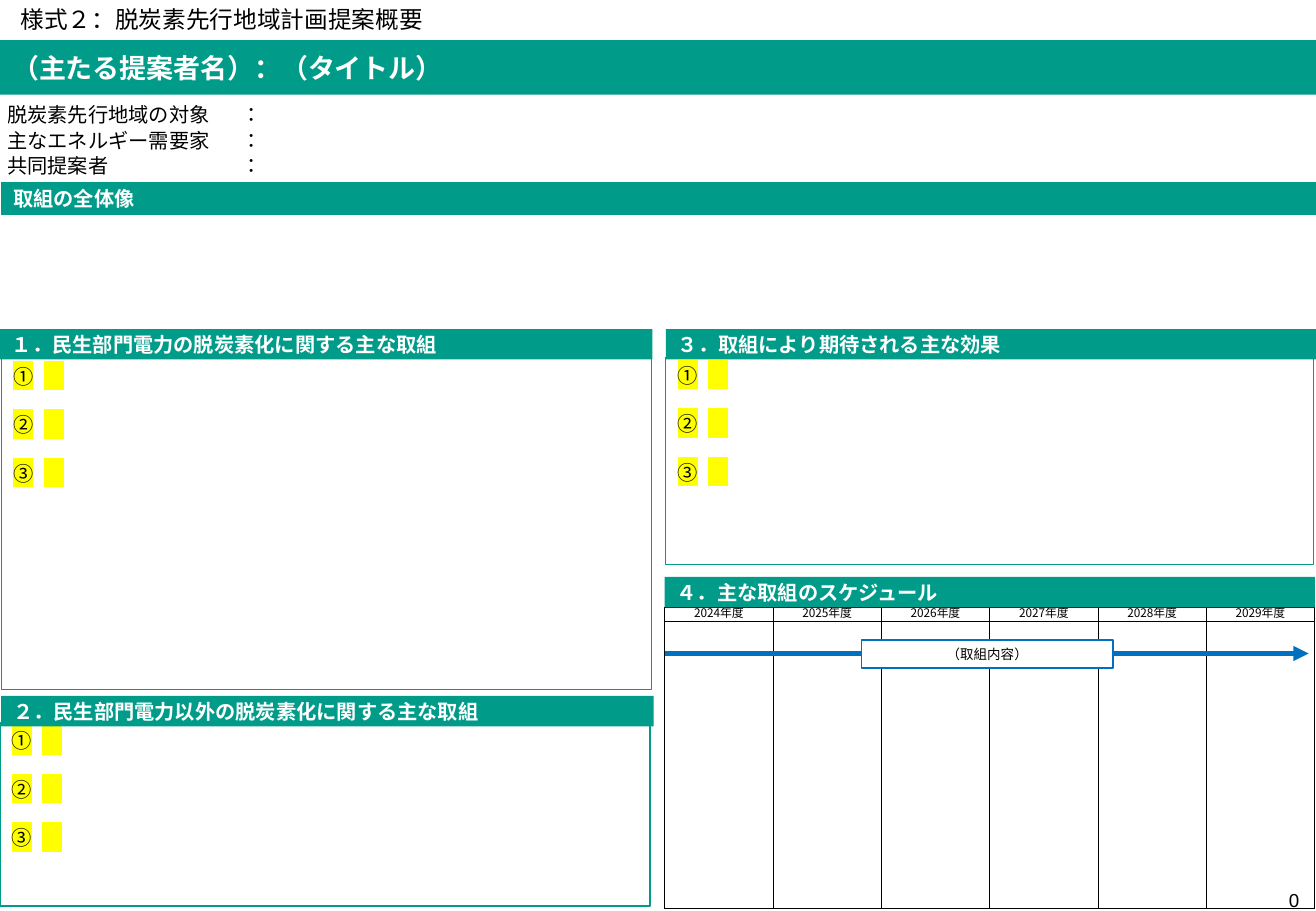
from dataclasses import dataclass

from lxml.etree import SubElement
from pptx import Presentation
from pptx.dml.color import RGBColor
from pptx.enum.shapes import MSO_CONNECTOR as Line, MSO_SHAPE as Shape
from pptx.enum.text import MSO_ANCHOR as Anchor, PP_ALIGN as Align
from pptx.oxml.ns import qn
from pptx.util import Inches, Pt


@dataclass(frozen=True)
class Theme:
    font = "Noto Sans CJK JP"
    teal = RGBColor.from_string("009C89")
    blue = RGBColor.from_string("0070C0")
    white = RGBColor.from_string("FFFFFF")
    black = RGBColor.from_string("000000")
    mark = "FFFF00"
    title = Pt(16)
    form = Pt(14)
    body = Pt(12)
    page = Pt(11.1)
    label = Pt(8)
    year = Pt(7)


def write(frame, text, size, color=Theme.black, bold=False, align=Align.LEFT):
    para = frame.paragraphs[0]
    para.text = text
    para.alignment = align
    font = para.font
    font.size, font.bold, font.name = size, bold, Theme.font
    font.color.rgb = color
    props = para._p.pPr.find(qn("a:defRPr"))
    SubElement(props, qn("a:ea"), typeface=Theme.font)
    return para


def pad(frame, side=0, top=0):
    """Set the inner margins of a text frame or table cell."""
    frame.margin_left = frame.margin_right = Inches(side)
    frame.margin_top = frame.margin_bottom = Inches(top)


prs = Presentation()
prs.slide_width, prs.slide_height = Inches(10.83), Inches(7.5)
slide = prs.slides.add_slide(prs.slide_layouts[5])
shapes = slide.shapes

# Framed boxes with numbered, highlighted entries
boxes = [
    (5.48, 2.94, 5.33, 1.71),
    (0.01, 2.95, 5.35, 2.73),
    (0, 5.95, 5.35, 1.51),
]
for spot in boxes:
    box = shapes.add_shape(Shape.RECTANGLE, *map(Inches, spot))
    box.shadow.inherit = False
    box.fill.background()
    box.line.color.rgb = Theme.teal
    box.line.width = Pt(0.75)
    frame = box.text_frame
    frame.vertical_anchor = Anchor.TOP
    pad(frame, 0.1, 0.05)
    for num in range(3):
        para = frame.add_paragraph() if num else frame.paragraphs[0]
        para.alignment = Align.LEFT
        if num:
            para.space_before = Pt(14.3)
        props = para._p.get_or_add_pPr()
        props.set("marL", str(Inches(0.25)))
        props.set("indent", str(-Inches(0.25)))
        SubElement(props, qn("a:buFont"), typeface=Theme.font)
        SubElement(props, qn("a:buAutoNum"), type="circleNumDbPlain")
        run = para.add_run()
        run.text = "　"
        run.font.size, run.font.bold = Theme.body, False
        run.font.color.rgb = Theme.black
        style = run._r.get_or_add_rPr()
        mark = SubElement(style, qn("a:highlight"))
        SubElement(mark, qn("a:srgbClr"), val=Theme.mark)
        for tag in ("a:latin", "a:ea"):
            SubElement(style, qn(tag), typeface=Theme.font)

# Schedule
years = range(2024, 2030)
plan = shapes.add_table(
    2, len(years), Inches(5.47), Inches(5), Inches(5.35), Inches(2.48)).table
plan.first_row = plan.horz_banding = False
plan.rows[0].height, plan.rows[1].height = Inches(0.12), Inches(2.36)
for col, year in enumerate(years):
    head = plan.cell(0, col)
    write(head.text_frame, f"{year}年度", Theme.year,
          align=Align.CENTER).line_spacing = Pt(8)
    head.vertical_anchor = Anchor.MIDDLE
for cell in plan.iter_cells():
    pad(cell)
    props = cell._tc.get_or_add_tcPr()
    for side in ("a:lnL", "a:lnR", "a:lnT", "a:lnB"):
        edge = SubElement(props, qn(side), w=str(Pt(0.5)))
        fill = SubElement(edge, qn("a:solidFill"))
        SubElement(fill, qn("a:srgbClr"), val=str(Theme.black))
    cell.fill.background()

# Title and section bars
title = shapes.title
shapes._spTree.append(title._element)
title.left, title.top = Inches(0), Inches(0.33)
title.width, title.height = Inches(10.83), Inches(0.45)
title.fill.solid()
title.fill.fore_color.rgb = Theme.teal
title.text_frame.vertical_anchor = Anchor.MIDDLE
write(title.text_frame, "（主たる提案者名）：（タイトル）", Theme.title,
      Theme.white, True)

bars = [
    ("１．民生部門電力の脱炭素化に関する主な取組", 0, 2.71, 5.37, 0.25),
    ("２．民生部門電力以外の脱炭素化に関する主な取組", 0.01, 5.73, 5.37, 0.25),
    ("４．主な取組のスケジュール", 5.47, 4.75, 5.35, 0.25),
    ("３．取組により期待される主な効果", 5.48, 2.71, 5.35, 0.25),
    ("取組の全体像", 0.01, 1.5, 10.82, 0.27),
]
for text, *spot in bars:
    bar = shapes.add_shape(Shape.RECTANGLE, *map(Inches, spot))
    bar.shadow.inherit = False
    bar.fill.solid()
    bar.fill.fore_color.rgb = Theme.teal
    bar.line.fill.background()
    bar.text_frame.vertical_anchor = Anchor.MIDDLE
    write(bar.text_frame, text, Theme.body, Theme.white, True)

# Arrow with its label
group = shapes.add_group_shape().shapes
arrow = group.add_connector(
    Line.STRAIGHT, Inches(5.47), Inches(5.38), Inches(10.77), Inches(5.38))
arrow.line.color.rgb = Theme.blue
arrow.line.width = Pt(3)
SubElement(arrow.line._get_or_add_ln(), qn("a:tailEnd"), type="triangle")
SubElement(arrow._element.spPr, qn("a:effectLst"))
label = group.add_shape(
    Shape.RECTANGLE, Inches(7.09), Inches(5.27), Inches(2.07), Inches(0.23))
label.shadow.inherit = False
label.fill.solid()
label.fill.fore_color.rgb = Theme.white
label.line.color.rgb = Theme.blue
label.line.width = Pt(0.75)
label.text_frame.vertical_anchor = Anchor.MIDDLE
pad(label.text_frame)
write(label.text_frame, "（取組内容）", Theme.label, align=Align.CENTER)

# Outline of the proposal; small type keeps the empty cells from growing
items = ["脱炭素先行地域の対象", "主なエネルギー需要家", "共同提案者"]
facts = shapes.add_table(
    len(items), 3, Inches(0.06), Inches(0.85), Inches(10.71), Inches(0.63)).table
facts.first_row = facts.horz_banding = False
for col, width in zip(facts.columns, (1.93, 0.24, 8.54)):
    col.width = Inches(width)
for row, item in enumerate(items):
    facts.rows[row].height = Inches(0.21)
    for col, text in enumerate((item, "：", "")):
        cell = facts.cell(row, col)
        cell.fill.background()
        pad(cell)
        size = Theme.body if text else Theme.label
        write(cell.text_frame, text, size,
              align=Align.JUSTIFY).line_spacing = Pt(15)

# Form name and page number
form = shapes.add_textbox(Inches(0.07), Inches(-0.01), Inches(3.54), Inches(0.34))
form.text_frame.word_wrap = False
write(form.text_frame, "様式２：脱炭素先行地域計画提案概要", Theme.form)

page = shapes.add_textbox(Inches(10.47), Inches(7.14), Inches(0.36), Inches(0.36))
page.text_frame.vertical_anchor = Anchor.BOTTOM
pad(page.text_frame)
write(page.text_frame, "0", Theme.page, align=Align.CENTER).font.name = "Arial"

prs.save("out.pptx")
